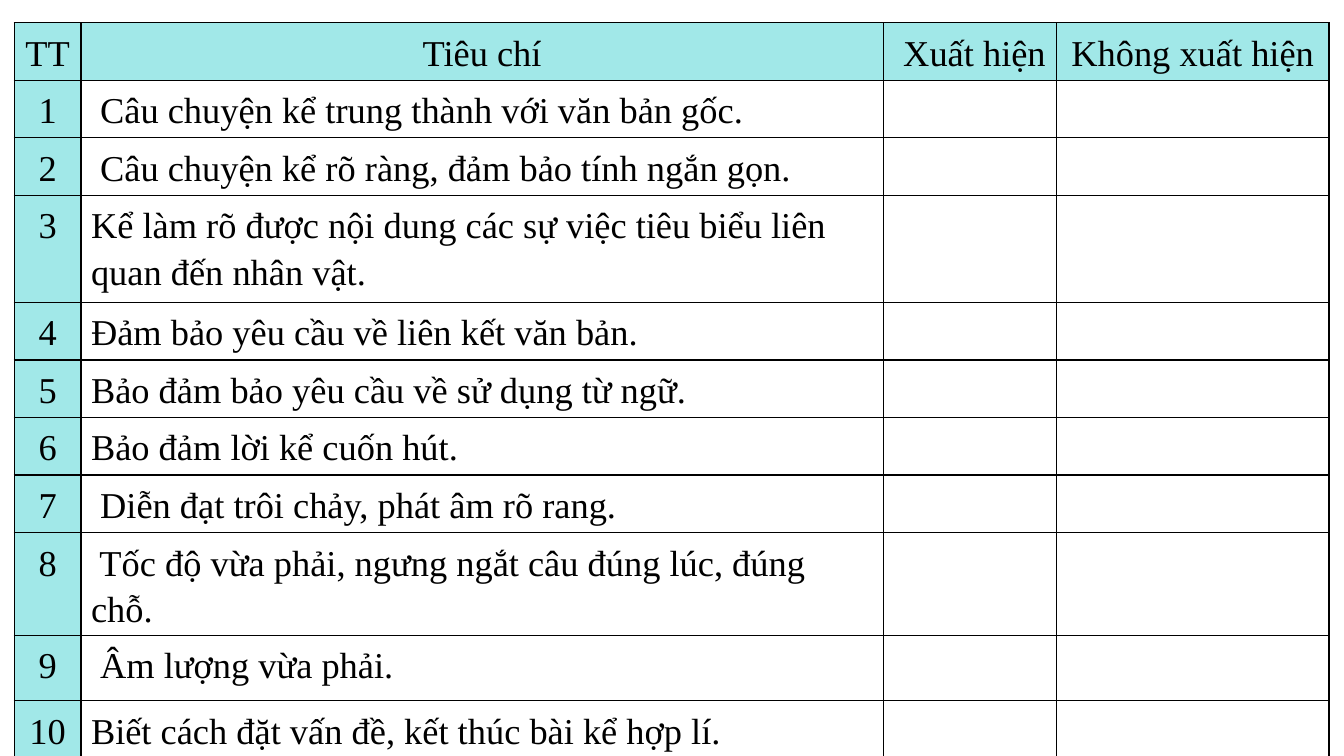
from lxml import etree
from pptx import Presentation
from pptx.dml.color import RGBColor
from pptx.enum.text import PP_ALIGN
from pptx.oxml.ns import qn
from pptx.util import Cm, Pt

CENTER, LEFT = PP_ALIGN.CENTER, PP_ALIGN.LEFT
AQUA = RGBColor(0xA1, 0xE8, 0xE8)
BLACK = RGBColor(0, 0, 0)
FONT = "Times New Roman"

# Content
HEADINGS = ["TT", "Tiêu chí", " Xuất hiện", "Không xuất hiện"]
CRITERIA = [
    " Câu chuyện kể trung thành với văn bản gốc.",
    " Câu chuyện kể rõ ràng, đảm bảo tính ngắn gọn.",
    "Kể làm rõ được nội dung các sự việc tiêu biểu liên quan đến nhân vật.",
    "Đảm bảo yêu cầu về liên kết văn bản.",
    "Bảo đảm bảo yêu cầu về sử dụng từ ngữ.",
    "Bảo đảm lời kể cuốn hút.",
    " Diễn đạt trôi chảy, phát âm rõ rang.",
    " Tốc độ vừa phải, ngưng ngắt câu đúng lúc, đúng chỗ.",
    " Âm lượng vừa phải.",
    "Biết cách đặt vấn đề, kết thúc bài kể hợp lí.",
]

# Sizes in centimetres; rows not listed have the usual height
COLUMN_WIDTHS = [1.68, 20.22, 4.37, 6.86]
ROW_HEIGHT = 1.45
SPECIAL_HEIGHTS = {3: 2.7, 8: 2.59, 9: 1.65, 10: 1.93}


def add_borders(cell):
    properties = cell._tc.get_or_add_tcPr()
    for index, side in enumerate(("lnL", "lnR", "lnT", "lnB")):
        line = etree.Element(qn(f"a:{side}"), w=str(Pt(1)))
        fill = etree.SubElement(line, qn("a:solidFill"))
        etree.SubElement(fill, qn("a:srgbClr"), val=str(BLACK))
        properties.insert(index, line)


def format_cell(cell, text, alignment, shaded):
    if shaded:
        cell.fill.solid()
        cell.fill.fore_color.rgb = AQUA
    else:
        cell.fill.background()
    add_borders(cell)
    if text:
        para = cell.text_frame.paragraphs[0]
        para.text = text
        para.alignment = alignment
        para.line_spacing = 1.15
        font = para.runs[0].font
        font.name, font.size, font.bold = FONT, Pt(26), False
        font.color.rgb = BLACK


def main():
    deck = Presentation()
    deck.slide_width, deck.slide_height = Cm(33.87), Cm(19.05)
    page = deck.slides.add_slide(deck.slide_layouts[6])

    # Checklist table
    rows = [HEADINGS]
    rows += [[str(number), text, "", ""] for number, text in enumerate(CRITERIA, 1)]
    heights = [SPECIAL_HEIGHTS.get(row, ROW_HEIGHT) for row in range(len(rows))]
    table = page.shapes.add_table(
        len(rows), len(HEADINGS), Cm(0.36), Cm(0.57),
        Cm(sum(COLUMN_WIDTHS)), Cm(sum(heights))).table
    table.horz_banding = False
    for column, width in zip(table.columns, COLUMN_WIDTHS):
        column.width = Cm(width)
    for row, height in zip(table.rows, heights):
        row.height = Cm(height)

    # Header row and number column are shaded and centred
    for r, row in enumerate(rows):
        for c, text in enumerate(row):
            is_label = r == 0 or c == 0
            format_cell(table.cell(r, c), text, CENTER if is_label else LEFT, is_label)

    deck.save("out.pptx")


if __name__ == "__main__":
    main()
